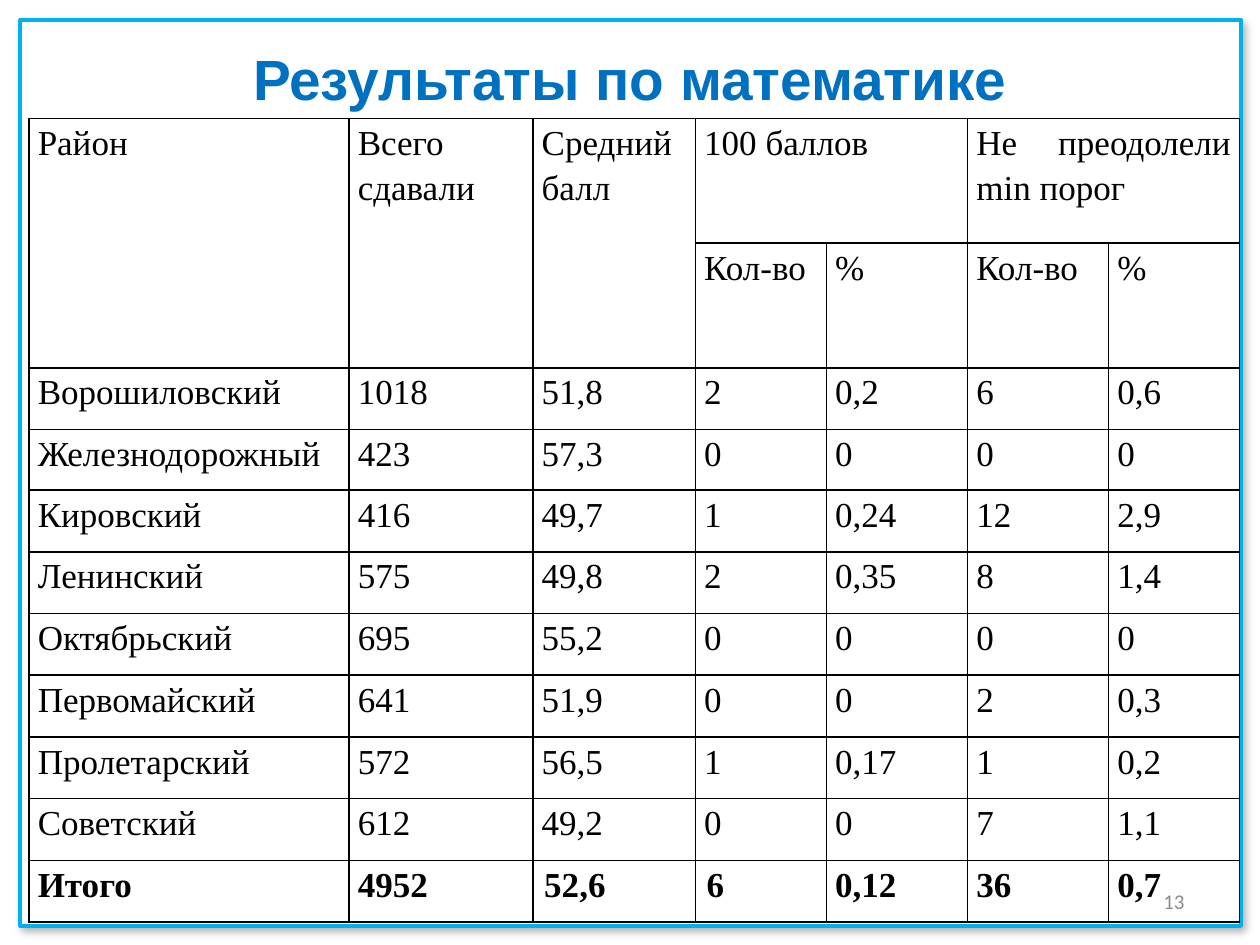
"""Build the slide with the mathematics results by district."""
from lxml.etree import SubElement
from pptx import Presentation
from pptx.dml.color import RGBColor as Color
from pptx.enum.shapes import MSO_SHAPE as Shape
from pptx.enum.text import MSO_ANCHOR as Anchor, PP_ALIGN as Align
from pptx.oxml import parse_xml
from pptx.oxml.ns import nsdecls, qn
from pptx.util import Inches, Pt

COLORS = {"paper": "FFFFFF", "frame": "00B0F0", "title": "0070C0",
          "ink": "000000", "number": "8C8C8C"}
WIDTHS = [2.54, 1.46, 1.29, 1.04, 1.12, 1.12, 1.04]
HEIGHTS = [0.99] * 2 + [0.49, 0.48] + [0.49] * 7
ROWS = [
    ["Район", "Всего сдавали", "Средний балл", "100 баллов", "",
     "Не преодолели min порог", ""],
    ["", "", "", "Кол-во", "%", "Кол-во", "%"],
    ["Ворошиловский", "1018", "51,8", "2", "0,2", "6", "0,6"],
    ["Железнодорожный", "423", "57,3", "0", "0", "0", "0"],
    ["Кировский", "416", "49,7", "1", "0,24", "12", "2,9"],
    ["Ленинский", "575", "49,8", "2", "0,35", "8", "1,4"],
    ["Октябрьский", "695", "55,2", "0", "0", "0", "0"],
    ["Первомайский", "641", "51,9", "0", "0", "2", "0,3"],
    ["Пролетарский", "572", "56,5", "1", "0,17", "1", "0,2"],
    ["Советский", "612", "49,2", "0", "0", "7", "1,1"],
    ["Итого", "4952", "52,6", "6", "0,12", "36", "0,7"],
]
TOTAL = len(ROWS) - 1


def write(para, text, color, font, **layout):
    for name, value in layout.items():
        setattr(para, name, value)
    span = para.add_run()
    span.text = text
    for name, value in font.items():
        setattr(span.font, name, value)
    span.font.color.rgb = Color.from_string(COLORS[color])


def add_borders(cell):
    properties = cell._tc.get_or_add_tcPr()
    for place, side in enumerate(("lnL", "lnR", "lnT", "lnB")):
        line = parse_xml(f'<a:{side} {nsdecls("a")} w="{Pt(1)}"><a:solidFill>'
                         f'<a:srgbClr val="{COLORS["ink"]}"/></a:solidFill></a:{side}>')
        properties.insert(place, line)


deck = Presentation()
deck.slide_width, deck.slide_height = Inches(10), Inches(7.5)
page = deck.slides.add_slide(deck.slide_layouts[5])

title = page.shapes.title
title.left, title.top, title.width, title.height = map(Inches, (0.5, 0.3, 9, 0.64))
title.text_frame.vertical_anchor = Anchor.MIDDLE
write(title.text_frame.paragraphs[0], "Результаты по математике", "title",
      {"name": "Arial", "size": Pt(32.4), "bold": True}, alignment=Align.CENTER)

frame = page.shapes.add_shape(Shape.RECTANGLE, *map(Inches, (0.16, 0.16, 9.69, 7.19)))
frame.fill.solid()
frame.fill.fore_color.rgb = Color.from_string(COLORS["paper"])
frame.line.color.rgb = Color.from_string(COLORS["frame"])
frame.line.width = Pt(2)
frame.shadow.inherit = False
effects = frame._element.spPr.find(qn("a:effectLst"))
shadow = SubElement(effects, qn("a:outerShdw"), blurRad=str(Pt(4.5)), dist=str(Pt(2.6)),
                    dir=str(53 * 60000), algn="tl", rotWithShape="0")
shade = SubElement(shadow, qn("a:srgbClr"), val=COLORS["ink"])
SubElement(shade, qn("a:alpha"), val="30000")
title._element.addprevious(frame._element)

table = page.shapes.add_table(len(ROWS), len(WIDTHS), Inches(0.23), Inches(0.94),
                              Inches(sum(WIDTHS)), Inches(sum(HEIGHTS))).table
table.first_row = table.horz_banding = False
for column, width in zip(table.columns, WIDTHS):
    column.width = Inches(width)
for row, height in zip(table.rows, HEIGHTS):
    row.height = Inches(height)
for column in range(3):
    table.cell(0, column).merge(table.cell(1, column))
for column in (3, 5):
    table.cell(0, column).merge(table.cell(0, column + 1))

CELL = {"margin_left": Inches(0.07), "margin_right": Inches(0.07),
        "margin_top": 0, "margin_bottom": 0}
for r, texts in enumerate(ROWS):
    for c, text in enumerate(texts):
        cell = table.cell(r, c)
        for name, value in CELL.items():
            setattr(cell, name, value)
        cell.fill.background()
        add_borders(cell)
        if cell.is_spanned:
            continue
        para = cell.text_frame.paragraphs[0]
        indented = r == TOTAL and c in (2, 3)
        plain = r >= TOTAL - 1 and c == 0
        if indented:
            para._p.get_or_add_pPr().set("indent", str(Inches(0.02)))
        write(para, text, "ink",
              {"name": "Times New Roman", "size": Pt(20), "bold": r == TOTAL},
              alignment=Align.LEFT if plain else Align.JUSTIFY, line_spacing=1.15,
              space_after=Pt(0 if plain or indented else 10))

number = page.shapes.add_textbox(*map(Inches, (7.17, 6.95, 2.33, 0.4)))
number.text_frame.word_wrap = True
number.text_frame.vertical_anchor = Anchor.MIDDLE
write(number.text_frame.paragraphs[0], "13", "number",
      {"name": "Calibri", "size": Pt(12)}, alignment=Align.RIGHT)

deck.save("out.pptx")
